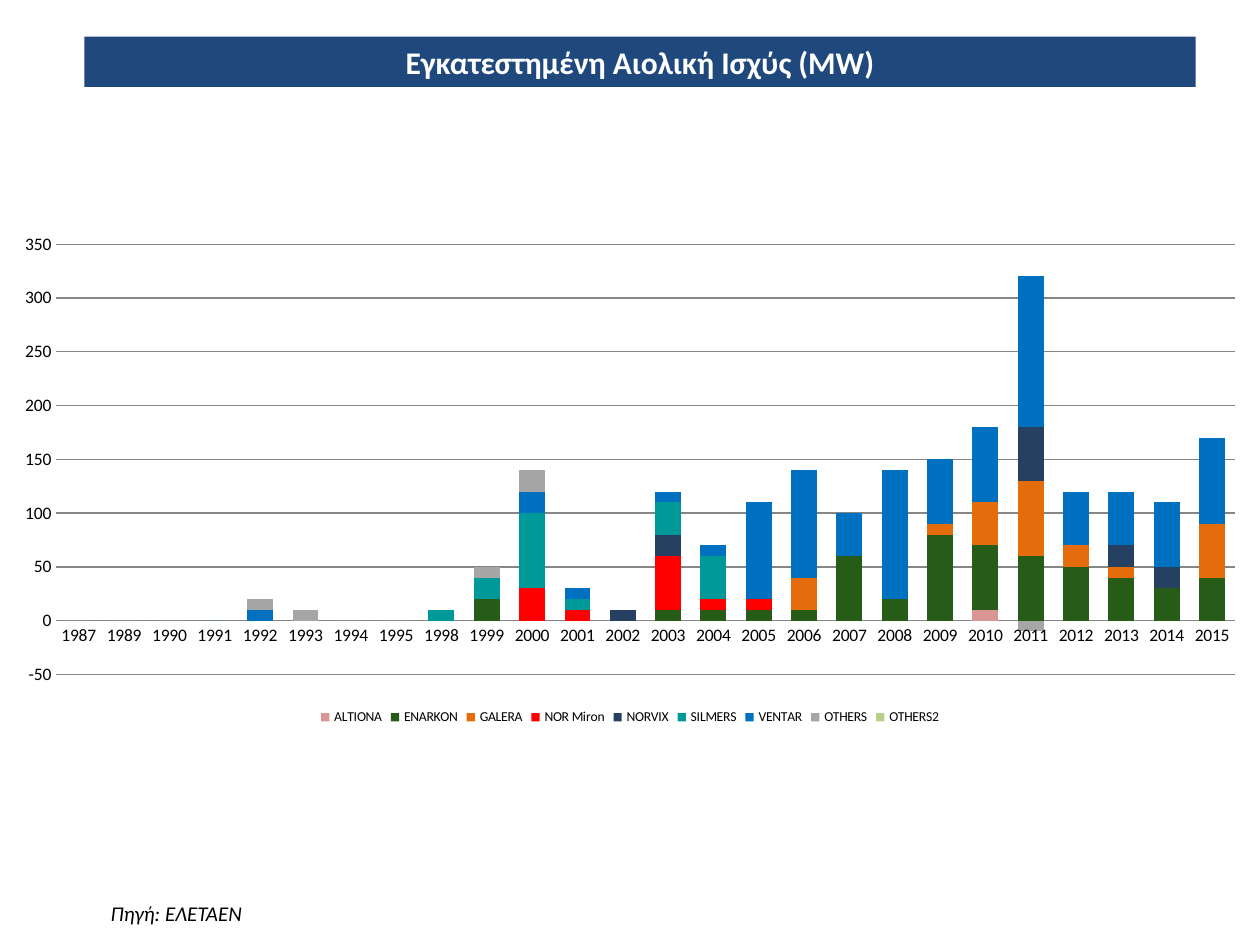
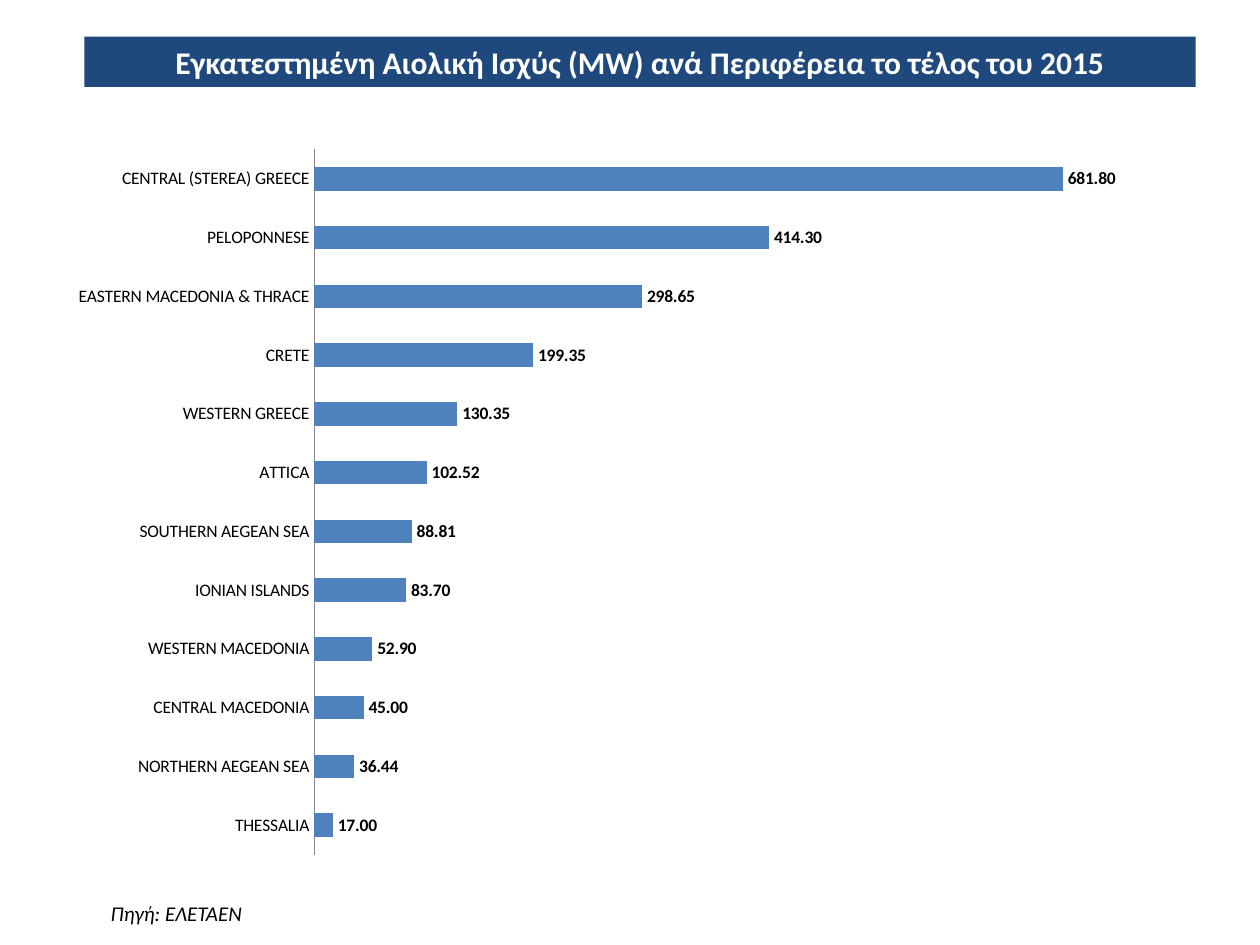
"""Build two slides on installed wind power in Greece, by maker and by region."""
import lxml.etree
import pptx
import pptx.chart.data
import pptx.dml.color
import pptx.enum.chart
import pptx.enum.text
import pptx.oxml.ns
import pptx.util

NAVY, WHITE, BLACK, GREY, BLUE = "1F497D", "FFFFFF", "000000", "868686", "4F81BD"
FONT = "Calibri"
SOURCE = "Πηγή: ΕΛΕΤΑΕΝ"


def color(hex_string):
    """Turn a hex string into a colour."""
    return pptx.dml.color.RGBColor.from_string(hex_string)


def style(font, size, hex_string=BLACK, bold=False, italic=False):
    """Set the typeface, size, colour and emphasis of a font."""
    font.name, font.size = FONT, pptx.util.Pt(size)
    font.bold, font.italic = bold, italic
    font.color.rgb = color(hex_string)


years = [1987, *range(1989, 1996), *range(1998, 2016)]
makers = {
    "ALTIONA": ("D99694", {2010: 10}),
    "ENARKON": ("275C18", {
        1999: 20, 2000: 0, 2001: 0, 2002: 0, 2003: 10, 2004: 10, 2005: 10, 2006: 10, 2007: 60,
        2008: 20, 2009: 80, 2010: 60, 2011: 60, 2012: 50, 2013: 40, 2014: 30, 2015: 40}),
    "GALERA": ("E46C0A", {
        2006: 30, 2008: 0, 2009: 10, 2010: 40, 2011: 70, 2012: 20, 2013: 10, 2015: 50}),
    "NOR Miron": ("FF0000", {
        1998: 0, 1999: 0, 2000: 30, 2001: 10, 2002: 0, 2003: 50, 2004: 10, 2005: 10, 2008: 0}),
    "NORVIX": ("254061", {2002: 10, 2003: 20, 2004: 0, 2011: 50, 2013: 20, 2014: 20}),
    "SILMERS": ("009999", {
        1998: 10, 1999: 20, 2000: 70, 2001: 10, 2003: 30, 2004: 40, 2006: 0, 2008: 0}),
    "VENTAR": ("0070C0", {
        1991: 0, 1992: 10, 1998: 0, 1999: 0, 2000: 20, 2001: 10, 2002: 0, 2003: 10, 2004: 10,
        2005: 90, 2006: 100, 2007: 40, 2008: 120, 2009: 60, 2010: 70, 2011: 140, 2012: 50,
        2013: 50, 2014: 60, 2015: 80}),
    "OTHERS": ("A6A6A6", {
        1987: 0, 1989: 0, 1990: 0, 1991: 0, 1992: 10, 1993: 10, 1994: 0, 1995: 0, 1998: 0,
        1999: 10, 2000: 20, 2001: 0, 2007: 0, 2010: 0, 2011: -10, 2013: 0, 2015: 0}),
    "OTHERS2": ("9BBB59", {2012: 0}),
}
regions = {
    "THESSALIA": 17, "NORTHERN AEGEAN SEA": 36.44, "CENTRAL MACEDONIA": 45,
    "WESTERN MACEDONIA": 52.9, "IONIAN ISLANDS": 83.7, "SOUTHERN AEGEAN SEA": 88.81,
    "ATTICA": 102.52, "WESTERN GREECE": 130.35, "CRETE": 199.35,
    "EASTERN MACEDONIA & THRACE": 298.65, "PELOPONNESE": 414.3,
    "CENTRAL (STEREA) GREECE": 681.8,
}

maker_data = pptx.chart.data.CategoryChartData(number_format="0")
maker_data.categories = [str(year) for year in years]
for maker, (_, megawatts) in makers.items():
    maker_data.add_series(maker, [megawatts.get(year) for year in years])
region_data = pptx.chart.data.CategoryChartData(number_format="0.00")
region_data.categories = list(regions)
region_data.add_series("Series 1", list(regions.values()))

chart_types = pptx.enum.chart.XL_CHART_TYPE
pages = [
    ("Εγκατεστημένη Αιολική Ισχύς (MW)", chart_types.COLUMN_STACKED, maker_data,
     (0, 1.78, 10, 4.02), 75, 100, [hex_string for hex_string, _ in makers.values()]),
    ("Εγκατεστημένη Αιολική Ισχύς (MW) ανά Περιφέρεια το τέλος του 2015",
     chart_types.BAR_CLUSTERED, region_data, (0.44, 1.07, 9.21, 5.83), 150, -25, [BLUE]),
]

presentation = pptx.Presentation()
presentation.slide_width = pptx.util.Inches(10)
presentation.slide_height = pptx.util.Inches(7.5)
charts = []

for heading, chart_type, data, frame, gap, overlap, fills in pages:
    slide = presentation.slides.add_slide(presentation.slide_layouts[5])

    chart = slide.shapes.add_chart(chart_type, *map(pptx.util.Inches, frame), data).chart
    charts.append(chart)
    chart.has_title = False
    chart.has_legend = False
    style(chart.font, 10)
    plot = chart.plots[0]
    plot.gap_width, plot.overlap, plot.vary_by_categories = gap, overlap, False
    for series, hex_string in zip(plot.series, fills):
        series.invert_if_negative = False
        series.format.fill.solid()
        series.format.fill.fore_color.rgb = color(hex_string)
    for axis in (chart.category_axis, chart.value_axis):
        axis.major_tick_mark = axis.minor_tick_mark = pptx.enum.chart.XL_TICK_MARK.NONE
        style(axis.tick_labels.font, 10)
    chart.category_axis.format.line.color.rgb = color(GREY)

    title = slide.shapes.title
    title.left, title.top, title.width, title.height = map(
        pptx.util.Inches, (0.67, 0.29, 8.82, 0.4))
    title.fill.solid()
    title.fill.fore_color.rgb = color(NAVY)
    title.text_frame.text = heading
    title.text_frame.auto_size = pptx.enum.text.MSO_AUTO_SIZE.NONE
    title.text_frame.vertical_anchor = pptx.enum.text.MSO_ANCHOR.MIDDLE
    title.text_frame.paragraphs[0].alignment = pptx.enum.text.PP_ALIGN.CENTER
    style(title.text_frame.paragraphs[0].font, 18, WHITE, bold=True)

    footer = slide.shapes.add_textbox(*map(pptx.util.Inches, (0.78, 7.1, 2.83, 0.3)))
    footer.text_frame.word_wrap = True
    footer.text_frame.text = SOURCE
    style(footer.text_frame.paragraphs[0].font, 12, italic=True)

maker_chart, region_chart = charts

maker_axis = maker_chart.value_axis
maker_axis.minimum_scale, maker_axis.maximum_scale, maker_axis.major_unit = -50, 350, 50
maker_axis.format.line.fill.background()
maker_axis.has_major_gridlines = True
maker_axis.major_gridlines.format.line.color.rgb = color(GREY)
maker_chart.has_legend = True
maker_chart.legend.position = pptx.enum.chart.XL_LEGEND_POSITION.BOTTOM
maker_chart.legend.include_in_layout = False
style(maker_chart.legend.font, 7.8)
qualified = pptx.oxml.ns.qn
last_fill = maker_chart.plots[0].series[-1].format.fill
last_color = maker_chart.series[-1]._element.spPr.find(".//" + qualified("a:srgbClr"))
lxml.etree.SubElement(last_color, qualified("a:alpha"), val="70000")

region_axis = region_chart.value_axis
region_axis.minimum_scale, region_axis.maximum_scale = 0, 800
region_axis.tick_labels.number_format = "0.00"
region_axis.tick_labels.number_format_is_linked = False
region_axis.has_major_gridlines = False
region_axis.visible = False
labels = region_chart.plots[0].series[0].data_labels
labels.show_value = True
labels.number_format, labels.number_format_is_linked = "0.00", False
labels.position = pptx.enum.chart.XL_LABEL_POSITION.OUTSIDE_END
style(labels.font, 10, bold=True)

presentation.save("out.pptx")
